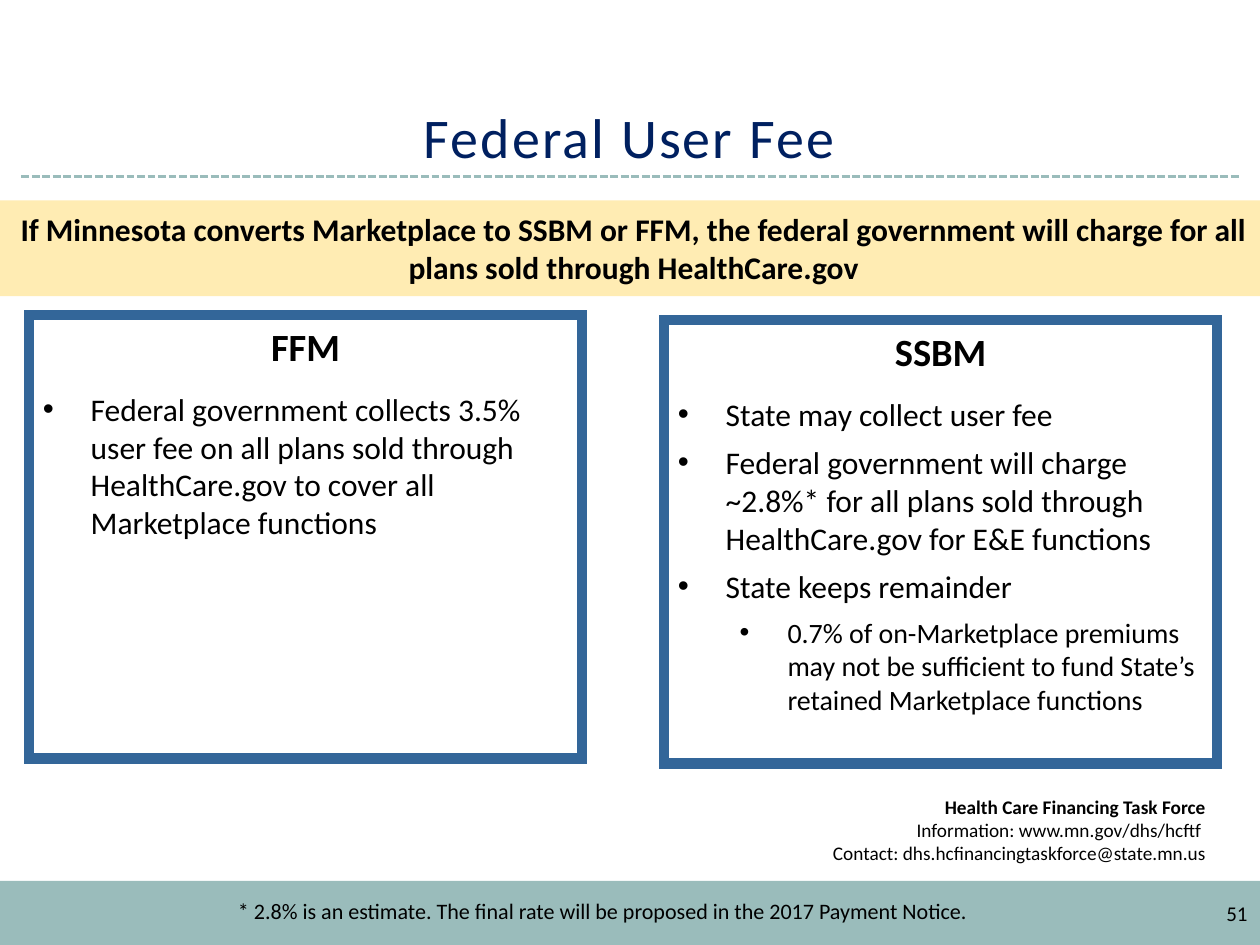
from lxml.etree import SubElement
from pptx import Presentation
from pptx.dml.color import RGBColor
from pptx.enum.dml import MSO_LINE_DASH_STYLE as Dash
from pptx.enum.shapes import MSO_CONNECTOR as Connector, MSO_SHAPE as Shape
from pptx.enum.text import MSO_ANCHOR as Anchor, MSO_AUTO_SIZE as AutoSize, PP_ALIGN as Align
from pptx.oxml.ns import qn
from pptx.util import Inches, Pt

TITLE = "Federal User Fee"
BANNER = ("If Minnesota converts Marketplace to SSBM or FFM, the federal government "
          "will charge for all plans sold through HealthCare.gov")
# Each panel: heading, then (level, text) bullets
PANELS = [
    ("FFM", [
        (0, "Federal government collects 3.5% user fee on all plans sold through "
            "HealthCare.gov to cover all Marketplace functions"),
    ]),
    ("SSBM", [
        (0, "State may collect user fee"),
        (0, "Federal government will charge ~2.8%* for all plans sold through "
            "HealthCare.gov for E&E functions"),
        (0, "State keeps remainder"),
        (1, "0.7% of on-Marketplace premiums may not be sufficient to fund State’s "
            "retained Marketplace functions"),
    ]),
]
CONTACT = ["Health Care Financing Task Force",
           "Information: www.mn.gov/dhs/hcftf ",
           "Contact: dhs.hcfinancingtaskforce@state.mn.us"]
FOOTNOTE = "* 2.8% is an estimate. The final rate will be proposed in the 2017 Payment Notice."
PAGE_NUMBER = "51"

THEME = {
    "font": "Calibri",
    "text": RGBColor.from_string("000000"),
    "title": RGBColor.from_string("002060"),
    "white": RGBColor.from_string("FFFFFF"),
    "teal": RGBColor.from_string("9ABCBB"),
    "cream": RGBColor.from_string("FFECB3"),
    "blue": RGBColor.from_string("336699"),
    "title_size": 32, "heading_size": 22, "bullet_sizes": (18, 16),
    "banner_size": 18, "contact_size": 11, "footnote_size": 12.6, "page_size": 12,
}
PANEL_LEFTS, PANEL_TOPS = (0.23, 5.27), (2.5, 2.54)
PANEL_SIZE = (4.39, 3.52)
BULLET_INDENTS, HANGING = (0.38, 0.87), 0.38


def set_all(target, **values):
    for name, value in values.items():
        setattr(target, name, value)


def place(shape, left, top, width, height):
    set_all(shape, left=Inches(left), top=Inches(top),
            width=Inches(width), height=Inches(height))


def set_font(paragraph, size, bold=False, color=THEME["text"]):
    set_all(paragraph.font, name=THEME["font"], size=Pt(size), bold=bold)
    paragraph.font.color.rgb = color


def set_bullet(paragraph, level=None):
    """Give a hanging bullet of the level, or none at all when level is None."""
    properties = paragraph._p.get_or_add_pPr()
    if level is None:
        left, hanging = 0, 0
        SubElement(properties, qn("a:buNone"))
    else:
        left, hanging = BULLET_INDENTS[level], HANGING
        SubElement(properties, qn("a:buFont"), typeface="Arial")
        SubElement(properties, qn("a:buChar"), char="•")
    properties.set("marL", str(Inches(left)))
    properties.set("indent", str(-Inches(hanging)))


def add_rectangle(slide, box, color):
    shape = slide.shapes.add_shape(Shape.RECTANGLE, *map(Inches, box))
    shape.shadow.inherit = False
    shape.fill.solid()
    shape.fill.fore_color.rgb = color
    shape.line.fill.background()
    return shape


def write_lines(shape, lines, size, align, anchor, bold_lines=0):
    frame = shape.text_frame
    set_all(frame, word_wrap=True, vertical_anchor=anchor, text="\n".join(lines))
    for index, paragraph in enumerate(frame.paragraphs):
        paragraph.alignment = align
        set_font(paragraph, size, bold=index < bold_lines)


def add_label(slide, box, text, size, align, anchor):
    label = slide.shapes.add_textbox(*map(Inches, box))
    write_lines(label, [text], size, align, anchor)


def add_rule(slide):
    rule = slide.shapes.add_connector(
        Connector.STRAIGHT, Inches(0.17), Inches(1.4), Inches(9.83), Inches(1.4))
    set_all(rule.line, width=Pt(1.5), dash_style=Dash.SQUARE_DOT)
    rule.line.color.rgb = THEME["teal"]
    SubElement(rule._element.spPr, qn("a:effectLst"))


def fill_title(title):
    place(title, 0.33, 0.25, 9.33, 1.15)
    set_all(title.text_frame, text=TITLE, vertical_anchor=Anchor.BOTTOM,
            auto_size=AutoSize.NONE)
    paragraph = title.text_frame.paragraphs[0]
    set_all(paragraph, alignment=Align.CENTER, line_spacing=Pt(40))
    set_font(paragraph, THEME["title_size"], color=THEME["title"])
    run = paragraph.runs[0]
    run.font._element.set("spc", "120")


def fill_panel(panel, left, top, heading, bullets):
    place(panel, left, top, *PANEL_SIZE)
    panel.fill.solid()
    panel.fill.fore_color.rgb = THEME["white"]
    panel.line.width = Pt(6)
    panel.line.color.rgb = THEME["blue"]
    SubElement(panel.line._get_or_add_ln(), qn("a:miter"), lim="800000")
    frame = panel.text_frame
    set_all(frame, auto_size=AutoSize.NONE, word_wrap=True, vertical_anchor=Anchor.TOP,
            margin_left=Inches(0.11), margin_right=Inches(0.11),
            margin_top=Inches(0.06), margin_bottom=Inches(0.06))
    paragraph = frame.paragraphs[0]
    set_all(paragraph, text=heading, alignment=Align.CENTER, space_before=Pt(0))
    set_bullet(paragraph)
    set_font(paragraph, THEME["heading_size"], bold=True)
    for index, (level, text) in enumerate(bullets):
        paragraph = frame.add_paragraph()
        set_all(paragraph, text=text, level=level, alignment=Align.LEFT,
                space_before=Pt(6 if index else 12))
        set_bullet(paragraph, level)
        set_font(paragraph, THEME["bullet_sizes"][level])


def main():
    presentation = Presentation()
    set_all(presentation, slide_width=Inches(10), slide_height=Inches(7.5))
    slide = presentation.slides.add_slide(presentation.slide_layouts.get_by_name("Two Content"))
    title, *panels = slide.placeholders

    add_rectangle(slide, (0, 6.99, 10, 0.51), THEME["teal"])
    add_rule(slide)
    contact = add_rectangle(slide, (4.54, 6.26, 5.13, 0.67), THEME["white"])
    write_lines(contact, CONTACT, THEME["contact_size"], Align.RIGHT, Anchor.TOP, bold_lines=1)
    banner = add_rectangle(slide, (-0.03, 1.59, 10.12, 0.76), THEME["cream"])
    write_lines(banner, [BANNER], THEME["banner_size"], Align.CENTER, Anchor.MIDDLE, bold_lines=1)

    fill_title(title)
    for panel, left, top, content in zip(panels, PANEL_LEFTS, PANEL_TOPS, PANELS):
        fill_panel(panel, left, top, *content)

    add_label(slide, (1.79, 7.1, 7.51, 0.28), FOOTNOTE, THEME["footnote_size"],
              Align.LEFT, Anchor.BOTTOM)
    add_label(slide, (7.67, 7.1, 2.33, 0.4), PAGE_NUMBER, THEME["page_size"],
              Align.RIGHT, Anchor.TOP)
    presentation.save("out.pptx")


if __name__ == "__main__":
    main()
